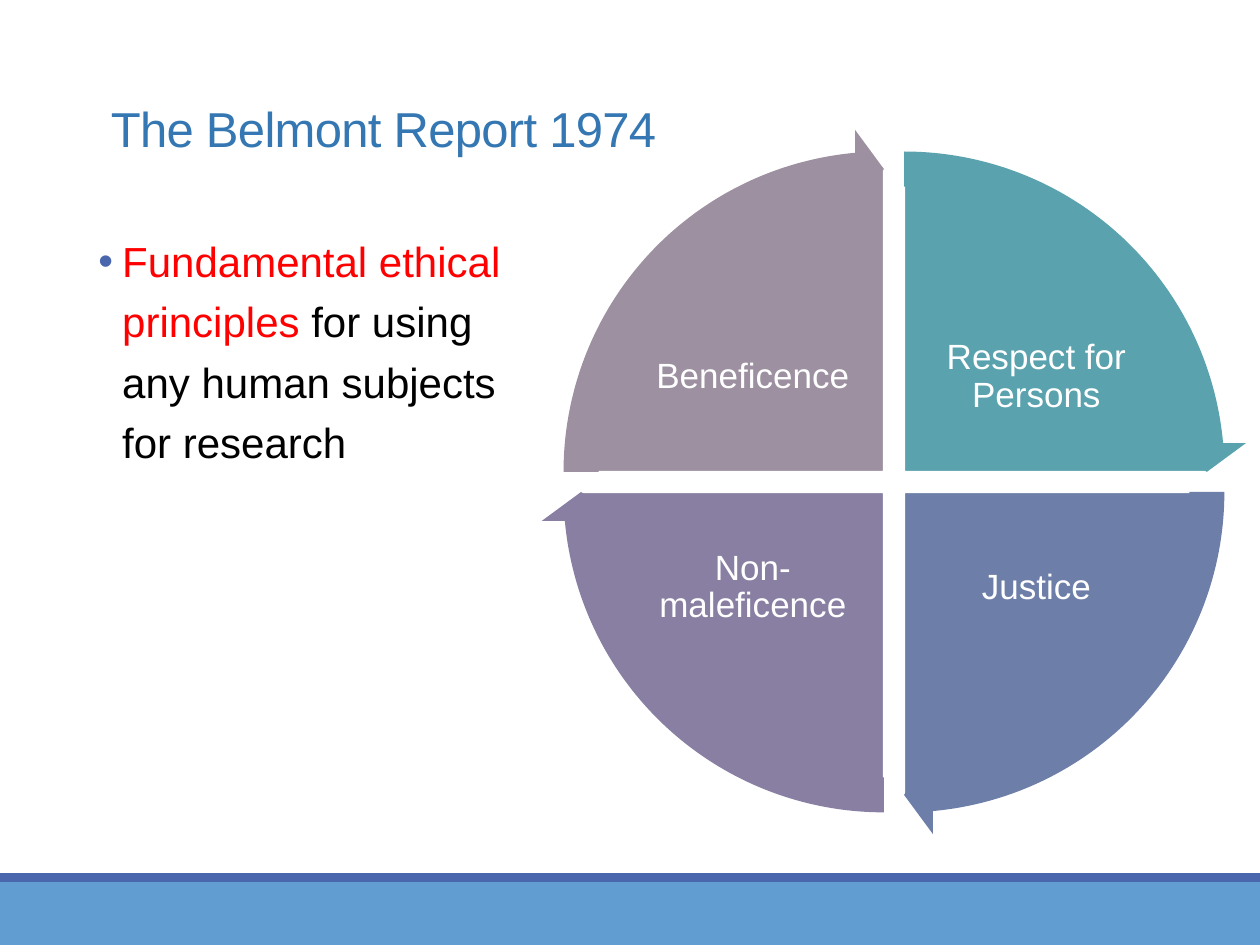
from lxml.etree import SubElement
from pptx import Presentation
from pptx.dml.color import RGBColor
from pptx.enum.shapes import MSO_SHAPE
from pptx.enum.text import MSO_ANCHOR, PP_ALIGN
from pptx.oxml.ns import qn
from pptx.util import Inches, Pt

WIDTH, HEIGHT = 10, 7.5
BLUE = "4A66AC"
# Clockwise from the top right: label, colour, column, row, start angle
QUADRANTS = [
    ("Respect for Persons", "5AA2AE", 1, 0, 270),
    ("Justice", "6D7FA8", 1, 1, 0),
    ("Non-maleficence", "887FA3", 0, 1, 90),
    ("Beneficence", "9D90A0", 0, 0, 180),
]


def color(hex_code):
    return RGBColor.from_string(hex_code)


def inches(*lengths):
    return [Inches(n) for n in lengths]


def place(sp, box):
    sp.left, sp.top, sp.width, sp.height = inches(*box)


def add_shape(s, kind, box, fill, line=None, adjustments=()):
    sp = s.shapes.add_shape(kind, *inches(*box))
    sp.shadow.inherit = False
    sp.fill.solid()
    sp.fill.fore_color.rgb = color(fill)
    if line:
        sp.line.color.rgb = color(line)
        sp.line.width = Pt(1.25)
    else:
        sp.line.fill.background()
    for i, value in enumerate(adjustments):
        sp.adjustments[i] = value
    return sp


def write(tf, runs, size, align=PP_ALIGN.LEFT, anchor=MSO_ANCHOR.TOP,
          spacing=1.0, insets=(0.1, 0.05), bullet=None, indent=0, tracking=0):
    """Fill a frame with one paragraph of (text, colour) runs."""
    tf.word_wrap = True
    tf.vertical_anchor = anchor
    tf.margin_left = tf.margin_right = Inches(insets[0])
    tf.margin_top = tf.margin_bottom = Inches(insets[1])
    p = tf.paragraphs[0]
    p.alignment, p.line_spacing, p.space_before = align, spacing, Pt(0)
    if bullet:
        pPr = p._p.get_or_add_pPr()
        pPr.set("marL", str(Inches(indent)))
        pPr.set("indent", str(-Inches(indent)))
        clr = SubElement(pPr, qn("a:buClr"))
        SubElement(clr, qn("a:srgbClr"), val=bullet)
        SubElement(pPr, qn("a:buFont"), typeface="Arial")
        SubElement(pPr, qn("a:buChar"), char="•")
    for text, hex_code in runs:
        r = p.add_run()
        r.text = text
        r.font.name, r.font.size = "Arial", Pt(size)
        r.font.color.rgb = color(hex_code)
        if tracking:
            r._r.get_or_add_rPr().set("spc", str(round(tracking * 100)))


def add_footer(s, box):
    x, y, w, h = box
    stripe = 0.07
    add_shape(s, MSO_SHAPE.RECTANGLE, box, "629DD1")
    add_shape(s, MSO_SHAPE.RECTANGLE, (x, y - stripe, w, stripe), BLUE)


def add_title(s, box):
    place(s.shapes.title, box)
    write(s.shapes.title.text_frame, [("The Belmont Report 1974", "3477B2")],
          28, anchor=MSO_ANCHOR.MIDDLE, spacing=0.85, tracking=-0.4)


def add_body(s, box):
    sp = s.shapes.add_textbox(*inches(*box))
    write(sp.text_frame,
          [("Fundamental ethical principles ", "FF0000"),
           ("for using any human subjects for research", "000000")],
          24, spacing=1.2, insets=(0, 0.05), bullet=BLUE, indent=0.19)


def add_cycle(s, box):
    """Four pie quarters pushed apart, each with a label and an arrow rim."""
    x, y, w, h = box
    gap, rim, sweep = 0.16, 0.3, 90
    size = w - gap - 2 * rim
    label_w, label_h = 1.79, 1.33

    # Quarters and labels
    for label, fill, col, row, start in QUADRANTS:
        pie = (x + rim + col * gap, y + rim + row * gap, size, size)
        # Adjustments hold angles in units of 5/3 degree
        add_shape(s, MSO_SHAPE.PIE, pie, fill, "FFFFFF",
                  (start * 0.6, (start + sweep) % 360 * 0.6))
        sp = s.shapes.add_textbox(*inches(x + 0.79 + col * 2.25,
                                          y + 1.31 + row * 1.67,
                                          label_w, label_h))
        write(sp.text_frame, [(label, "FFFFFF")], 20, PP_ALIGN.CENTER,
              MSO_ANCHOR.MIDDLE, spacing=0.9, insets=(0.03, 0.03))

    # Arrow rims
    thickness, head, head_width = 0.051, 3.275, 0.059
    for label, fill, col, row, start in QUADRANTS:
        ring = (x + col * gap, y + row * gap, w - gap, h - gap)
        add_shape(s, MSO_SHAPE.CIRCULAR_ARROW, ring, fill, adjustments=(
            thickness, head, (start + sweep) * 0.6 - head, start * 0.6,
            head_width))


def main():
    prs = Presentation()
    prs.slide_width, prs.slide_height = inches(WIDTH, HEIGHT)
    s = prs.slides.add_slide(prs.slide_layouts.get_by_name("Title Only"))
    margin = 0.078 * WIDTH
    add_footer(s, (0, HEIGHT - 0.5, WIDTH, 0.5))
    add_title(s, (margin, 0.42, 0.84 * WIDTH, 1.26))
    add_body(s, (margin, 1.74, 0.348 * WIDTH, 5))
    add_cycle(s, (4.29, 1.02, 5.61, 5.61))
    prs.save("out.pptx")


if __name__ == "__main__":
    main()
